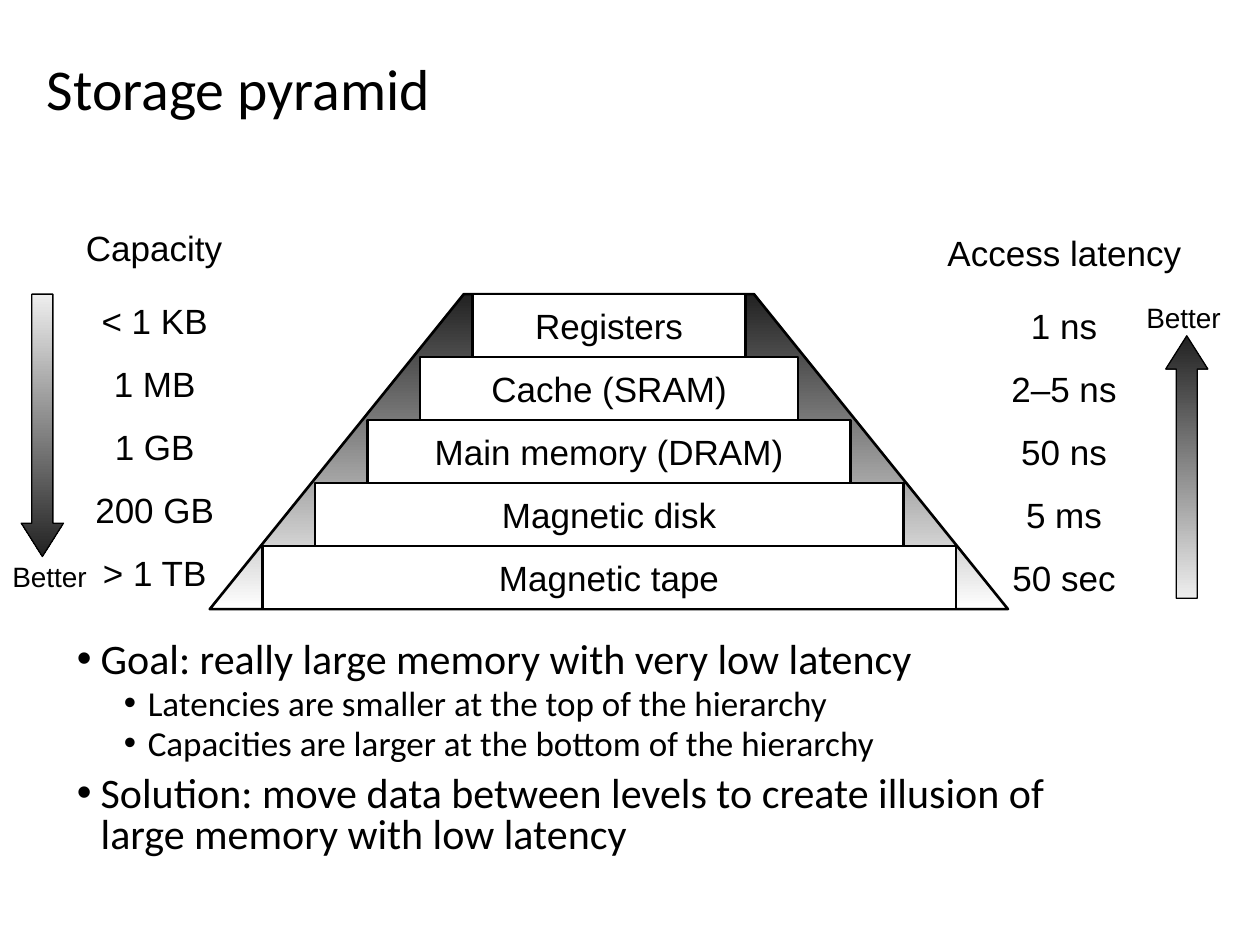
import pptx
import pptx.util
import pptx.dml.color
import pptx.enum.shapes
import pptx.enum.text
import pptx.oxml
import pptx.oxml.ns
from dataclasses import dataclass

Cm, Pt = pptx.util.Cm, pptx.util.Pt
RGB = pptx.dml.color.RGBColor
SHAPE = pptx.enum.shapes.MSO_SHAPE
MIDDLE = pptx.enum.text.MSO_ANCHOR.MIDDLE
ALIGN = pptx.enum.text.PP_ALIGN


@dataclass(frozen=True)
class Theme:
    black: RGB = RGB(0x00, 0x00, 0x00)
    white: RGB = RGB(0xFF, 0xFF, 0xFF)
    dark: RGB = RGB(0x22, 0x22, 0x22)
    light: RGB = RGB(0xEE, 0xEE, 0xEE)
    label_font: str = "Arial"
    body_font: str = "Calibri"
    title: Pt = Pt(33)
    goal: Pt = Pt(24)
    detail: Pt = Pt(20)
    label: Pt = Pt(20)
    note: Pt = Pt(16)


theme = Theme()


def style_text(paragraph, size, font):
    for run in paragraph.runs:
        run.font.size = size
        run.font.name = font
        run.font.color.rgb = theme.black


def shade(shape, top, bottom, line_width):
    """Fill with a vertical gradient and draw a black outline."""
    shape.shadow.inherit = False
    shape.fill.gradient()
    shape.fill.gradient_angle = 270
    for stop, color in zip(shape.fill.gradient_stops, (top, bottom)):
        stop.color.rgb = color
    shape.line.color.rgb = theme.black
    shape.line.width = line_width


prs = pptx.Presentation()
prs.slide_width, prs.slide_height = Cm(25.4), Cm(19.05)
slide = prs.slides.add_slide(prs.slide_layouts[5])

title = slide.shapes.title
title.left, title.top, title.width, title.height = Cm(0.69), Cm(0.58), Cm(21.64), Cm(2.54)
title.text_frame.text = "Storage pyramid"
title.text_frame.vertical_anchor = MIDDLE
title_line = title.text_frame.paragraphs[0]
title_line.alignment = ALIGN.LEFT
title_line.line_spacing = 0.9
style_text(title_line, theme.title, theme.body_font)

# Columns of boxes: texts, center, top, first width, growth per row, in pyramid.
# The pyramid comes last, so that its corners lie over the side columns.
PYRAMID_TOP, LEVEL_HEIGHT = 5.93, 1.27
levels = ["Registers", "Cache (SRAM)", "Main memory (DRAM)", "Magnetic disk", "Magnetic tape"]
pyramid_bottom = PYRAMID_TOP + LEVEL_HEIGHT * len(levels)
columns = [
    (["1 ns", "2–5 ns", "50 ns", "5 ms", "50 sec"], 21.45, PYRAMID_TOP, 2.96, 0, False),
    (["< 1 KB", "1 MB", "1 GB", "200 GB", "> 1 TB"], 3.12, 5.82, 2.96, 0, False),
    (levels, 12.28, PYRAMID_TOP, 5.5, 2.12, True),
]
for texts, center, top, first_width, growth, in_pyramid in columns:
    container = slide.shapes
    if in_pyramid:
        container = slide.shapes.add_group_shape().shapes
        outline = container.build_freeform(Cm(4.23), Cm(pyramid_bottom))
        outline.add_line_segments([
            (Cm(9.35), Cm(PYRAMID_TOP)),
            (Cm(15.2), Cm(PYRAMID_TOP)),
            (Cm(20.32), Cm(pyramid_bottom)),
        ])
        shade(outline.convert_to_shape(), theme.dark, theme.white, Pt(1.5))
    for row, text in enumerate(texts):
        width = first_width + growth * row
        box = container.add_shape(SHAPE.RECTANGLE, Cm(center - width / 2),
                                  Cm(top + LEVEL_HEIGHT * row), Cm(width), Cm(LEVEL_HEIGHT))
        box.shadow.inherit = False
        box.fill.solid()
        box.fill.fore_color.rgb = theme.white
        if in_pyramid:
            box.line.color.rgb = theme.black
            box.line.width = Pt(1.5)
        else:
            box.line.fill.background()
        box.text_frame.text = text
        box.text_frame.word_wrap = False
        box.text_frame.vertical_anchor = MIDDLE
        box.text_frame.paragraphs[0].alignment = ALIGN.CENTER
        style_text(box.text_frame.paragraphs[0], theme.label, theme.label_font)

# Arrows pointing towards the better value
arrows = [
    (SHAPE.DOWN_ARROW, 0.43, 5.93, theme.light, theme.dark),
    (SHAPE.UP_ARROW, 23.5, 6.77, theme.dark, theme.light),
]
for kind, left, top, top_color, bottom_color in arrows:
    arrow = slide.shapes.add_shape(kind, Cm(left), Cm(top), Cm(0.85), Cm(5.29))
    arrow.adjustments[0], arrow.adjustments[1] = 0.5, 0.79
    shade(arrow, top_color, bottom_color, Pt(0.75))

captions = [
    ("Access latency", 18.85, 4.55, 5.6, 1.1, theme.label),
    ("Capacity", 1.48, 4.45, 3.4, 1.1, theme.label),
    ("Better", 0, 11.15, 2.1, 0.94, theme.note),
    ("Better", 22.86, 5.93, 2.1, 0.94, theme.note),
]
for text, left, top, width, height, size in captions:
    caption = slide.shapes.add_textbox(Cm(left), Cm(top), Cm(width), Cm(height))
    caption.text_frame.text = text
    caption.text_frame.word_wrap = False
    caption.text_frame.auto_size = pptx.enum.text.MSO_AUTO_SIZE.NONE
    caption.text_frame.paragraphs[0].alignment = ALIGN.LEFT
    # An unwrapped line is centred on its box unless the box is wide enough to wrap in
    caption.text_frame.word_wrap = True
    style_text(caption.text_frame.paragraphs[0], size, theme.label_font)

# Bulleted conclusions
conclusions = [
    (0, "Goal: really large memory with very low latency"),
    (1, "Latencies are smaller at the top of the hierarchy"),
    (1, "Capacities are larger at the bottom of the hierarchy"),
    (0, "Solution: move data between levels to create illusion of large memory with low latency"),
]
level_styles = [(theme.goal, Pt(7.5), Cm(0.48)), (theme.detail, Pt(3.8), Cm(1.43))]
body = slide.shapes.add_textbox(Cm(1.3), Cm(12.83), Cm(21.59), Cm(4.7)).text_frame
body.word_wrap = True
for index, (level, text) in enumerate(conclusions):
    point = body.paragraphs[0] if index == 0 else body.add_paragraph()
    size, space_before, margin = level_styles[level]
    point.text = text
    point.level = level
    point.line_spacing = 0.8
    point.space_before = space_before
    style_text(point, size, theme.body_font)
    properties = point._p.get_or_add_pPr()
    properties.set("marL", str(margin))
    properties.set("indent", str(-Cm(0.48)))
    for tag, name, value in (("a:buFont", "typeface", "Arial"), ("a:buChar", "char", "•")):
        bullet = pptx.oxml.parse_xml(f"<{tag} {pptx.oxml.ns.nsdecls('a')}/>")
        bullet.set(name, value)
        properties.append(bullet)

prs.save("out.pptx")
